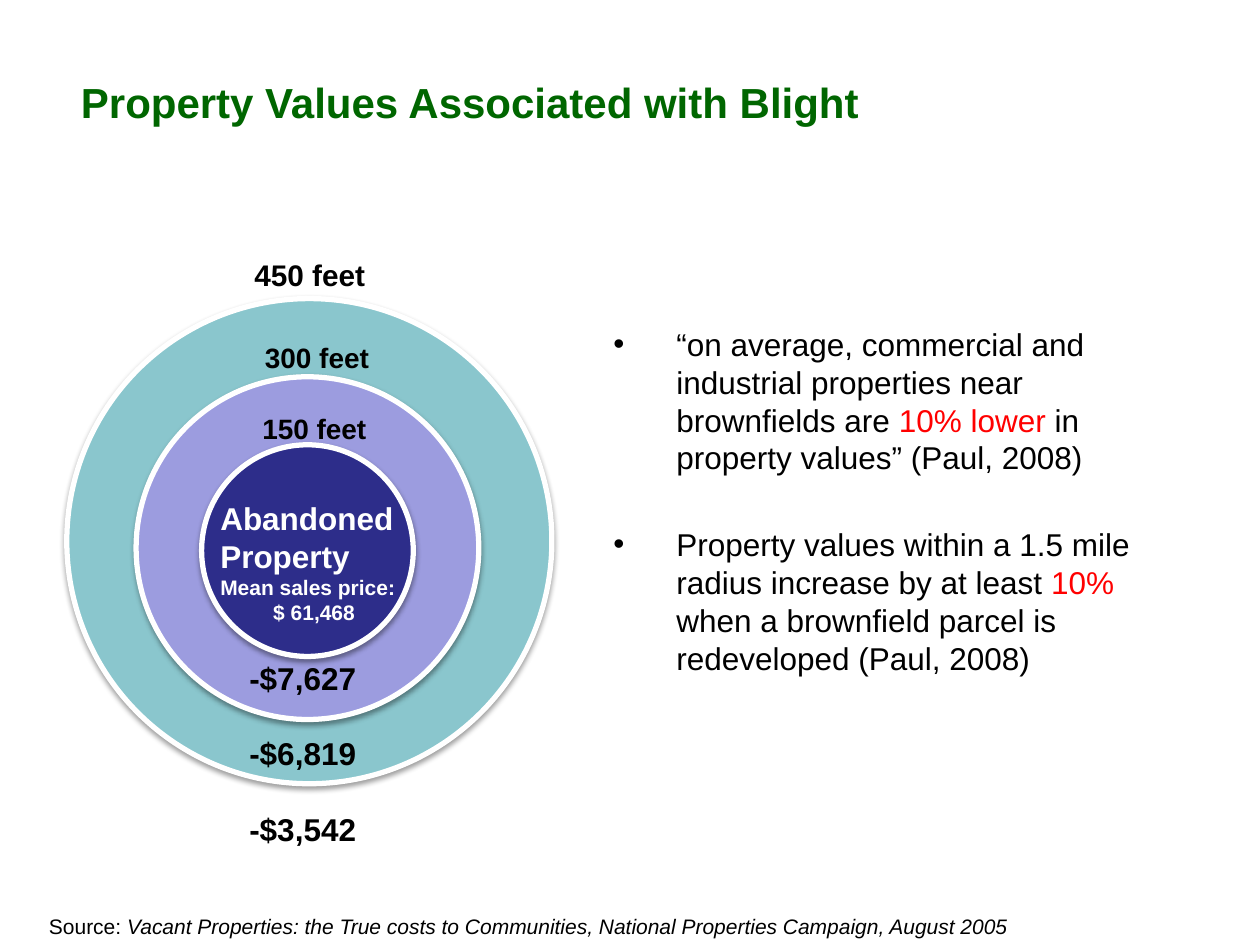
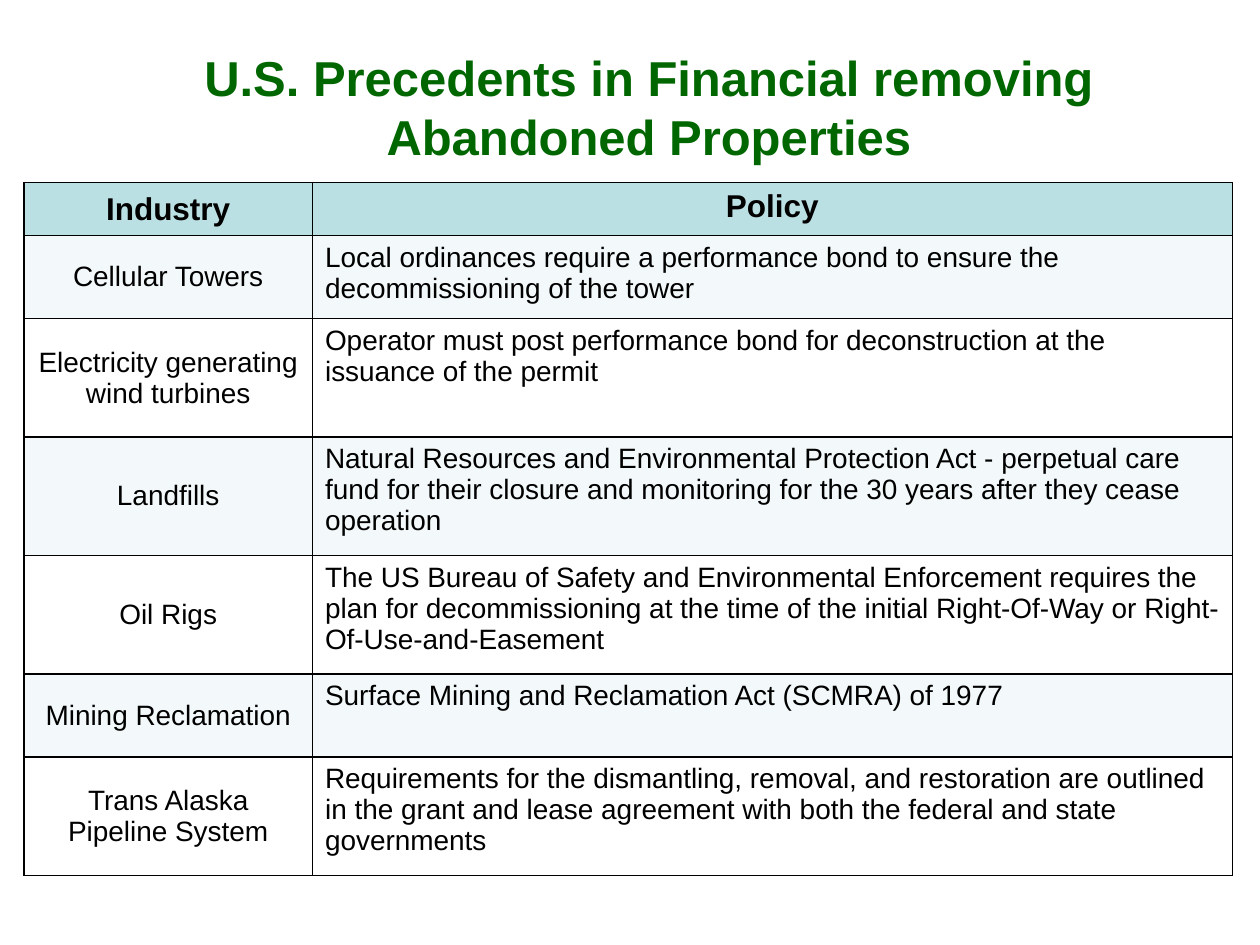
from lxml import etree
from pptx import Presentation
from pptx.dml.color import RGBColor
from pptx.enum.shapes import MSO_SHAPE
from pptx.enum.text import MSO_ANCHOR, PP_ALIGN
from pptx.oxml.ns import qn
from pptx.util import Inches, Pt

# Shared style
FONT = "Arial"
COLORS = {
    "title": "006600", "text": "000000", "accent": "FF0000", "white": "FFFFFF",
    "outer": "8AC6CD", "middle": "9C9CDF", "inner": "2D2D8A",
    "header": "BBE0E3", "band": "F3F9FA", "border": "000000",
}

# Slide 1 content
BLIGHT_TITLE = "Property Values Associated with Blight"
RINGS = [  # colour, left, top, diameter
    ("outer", 0.53, 2.37, 3.85),
    ("middle", 1.08, 2.99, 2.72),
    ("inner", 1.6, 3.53, 1.68),
]
DISTANCES = [  # wording, left, top, width, height
    ("300 feet", 1.84, 2.56, 1.35, 0.58),
    ("150 feet", 1.86, 3.16, 1.27, 0.51),
]
PRICE_LINES = [  # wording, size, left indent
    ("Abandoned Property", 18, 0),
    ("Mean sales price:", 12, 0),
    ("$ 61,468", 12, 0.42),
]
LOSSES = ["-$7,627", "-$6,819", "-$3,542"]
FINDINGS = [
    [("“on average, commercial and industrial properties near brownfields are ", "text"),
     ("10% lower ", "accent"),
     ("in property values” (Paul, 2008)", "text")],
    [("Property values within a 1.5 mile radius increase by at least ", "text"),
     ("10%", "accent"),
     (" when a brownfield parcel is redeveloped (Paul, 2008)", "text")],
]
SOURCE_LABEL = "Source: "
SOURCE_NAME = ("Vacant Properties: the True costs to Communities, "
               "National Properties Campaign, August 2005")

# Slide 2 content
PRECEDENT_TITLE = "U.S. Precedents in Financial removing Abandoned Properties"
COLUMN_WIDTHS = [2.29, 7.3]
HEADINGS = ("Industry", "Policy")
HEADING_HEIGHT = 0.42
POLICIES = [  # industry, policy, row height
    ("Cellular Towers",
     "Local ordinances require a performance bond to ensure the decommissioning of the tower",
     0.66),
    ("Electricity generating wind turbines",
     "Operator must post performance bond for deconstruction at the issuance of the permit",
     0.94),
    ("Landfills",
     "Natural Resources and Environmental Protection Act - perpetual care fund for their "
     "closure and monitoring for the 30 years after they cease operation", 0.94),
    ("Oil Rigs",
     "The US Bureau of Safety and Environmental Enforcement requires the plan for "
     "decommissioning at the time of the initial Right-Of-Way or Right-Of-Use-and-Easement",
     0.94),
    ("Mining Reclamation", "Surface Mining and Reclamation Act (SCMRA) of 1977", 0.66),
    ("Trans Alaska Pipeline System",
     "Requirements for the dismantling, removal, and restoration are outlined in the grant "
     "and lease agreement with both the federal and state governments", 0.94),
]


# Helpers
def rgb(name):
    return RGBColor.from_string(COLORS[name])


def add_span(para, text, size, color="text", bold=False, italic=False):
    span = para.add_run()
    span.text = text
    font = span.font
    font.name, font.size, font.bold, font.italic = FONT, Pt(size), bold, italic
    font.color.rgb = rgb(color)


def add_box(page, left, top, width, height):
    box = page.shapes.add_textbox(Inches(left), Inches(top), Inches(width), Inches(height))
    box.text_frame.word_wrap = True
    return box.text_frame


def next_para(frame, index):
    return frame.add_paragraph() if index else frame.paragraphs[0]


def set_indent(para, left, first=0):
    properties = para._p.get_or_add_pPr()
    properties.set("marL", str(Inches(left)))
    properties.set("indent", str(Inches(first)))
    return properties


def add_title(page, text, size, left, top, width):
    para = add_box(page, left, top, width, 1.04).paragraphs[0]
    para.alignment = PP_ALIGN.CENTER
    add_span(para, text, size, "title", bold=True)


def add_shadow(shape):
    effects = etree.SubElement(shape._element.spPr, qn("a:effectLst"))
    shadow = etree.SubElement(effects, qn("a:outerShdw"), blurRad=str(Pt(3.1)),
                              dist=str(Pt(1.6)), dir="5400000", rotWithShape="0")
    color = etree.SubElement(shadow, qn("a:srgbClr"), val=COLORS["text"])
    etree.SubElement(color, qn("a:alpha"), val="38000")


def add_borders(cell):
    properties = cell._tc.get_or_add_tcPr()
    for side in ("lnL", "lnR", "lnT", "lnB"):
        line = etree.SubElement(properties, qn("a:" + side), w=str(Pt(1)))
        fill = etree.SubElement(line, qn("a:solidFill"))
        etree.SubElement(fill, qn("a:srgbClr"), val=COLORS["border"])


def build_blight(page):
    add_title(page, BLIGHT_TITLE, 24, 0.46, 0.56, 6.54)

    # Findings
    frame = add_box(page, 4.77, 2.53, 4.61, 4.57)
    for index, finding in enumerate(FINDINGS):
        para = next_para(frame, index)
        bullet = set_indent(para, 0.5, -0.5)
        etree.SubElement(bullet, qn("a:buFont"), typeface=FONT)
        etree.SubElement(bullet, qn("a:buChar"), char="•")
        if index:
            para.space_before = Pt(28)
        for text, color in finding:
            add_span(para, text, 18, color)

    # Rings and their distances
    for color, left, top, diameter in RINGS:
        ring = page.shapes.add_shape(MSO_SHAPE.OVAL, Inches(left), Inches(top),
                                     Inches(diameter), Inches(diameter))
        ring.fill.solid()
        ring.fill.fore_color.rgb = rgb(color)
        ring.line.color.rgb = rgb("white")
        ring.line.width = Pt(3)
        add_shadow(ring)
    for text, *place in DISTANCES:
        frame = add_box(page, *place)
        frame.vertical_anchor = MSO_ANCHOR.MIDDLE
        frame.margin_left = frame.margin_right = Inches(0.12)
        frame.margin_top = frame.margin_bottom = Inches(0.12)
        para = frame.paragraphs[0]
        para.alignment = PP_ALIGN.CENTER
        para.line_spacing = 0.9
        add_span(para, text, 16, bold=True)
    outer_label = add_box(page, 1.92, 1.99, 1.24, 0.39)
    add_span(outer_label.paragraphs[0], "450 feet", 17, bold=True)

    # Price at the centre, losses below
    frame = add_box(page, 1.65, 3.91, 2.08, 1.11)
    for index, (text, size, indent) in enumerate(PRICE_LINES):
        para = next_para(frame, index)
        set_indent(para, indent)
        add_span(para, text, size, "white", bold=True)
    frame = add_box(page, 1.88, 5.18, 1.32, 1.62)
    for index, loss in enumerate(LOSSES):
        para = next_para(frame, index)
        if index:
            para.space_before = Pt(21.6)
        add_span(para, loss, 18, bold=True)

    # Source line
    para = add_box(page, 0.29, 7.2, 9.09, 0.3).paragraphs[0]
    add_span(para, SOURCE_LABEL, 12)
    add_span(para, SOURCE_NAME, 12, italic=True)


def build_precedents(page):
    add_title(page, PRECEDENT_TITLE, 28, 0.86, 0.33, 8.58)

    # Policy table
    rows = [(*HEADINGS, HEADING_HEIGHT)] + POLICIES
    table = page.shapes.add_table(
        len(rows), len(COLUMN_WIDTHS), Inches(0.19), Inches(1.45),
        Inches(sum(COLUMN_WIDTHS)), Inches(sum(row[-1] for row in rows))).table
    for column, width in zip(table.columns, COLUMN_WIDTHS):
        column.width = Inches(width)
    for row_index, (*texts, height) in enumerate(rows):
        table.rows[row_index].height = Inches(height)
        heading = row_index == 0
        fill = "header" if heading else "band" if row_index % 2 else "white"
        for column_index, text in enumerate(texts):
            cell = table.cell(row_index, column_index)
            add_borders(cell)
            cell.fill.solid()
            cell.fill.fore_color.rgb = rgb(fill)
            industry = column_index == 0
            cell.vertical_anchor = MSO_ANCHOR.MIDDLE if industry else MSO_ANCHOR.TOP
            para = cell.text_frame.paragraphs[0]
            para.alignment = PP_ALIGN.CENTER if heading or industry else PP_ALIGN.LEFT
            add_span(para, text, 18 if heading else 16, bold=heading)


def main():
    deck = Presentation()
    deck.slide_width, deck.slide_height = Inches(10), Inches(7.5)
    for build in (build_blight, build_precedents):
        build(deck.slides.add_slide(deck.slide_layouts[6]))
    deck.save("out.pptx")


if __name__ == "__main__":
    main()
